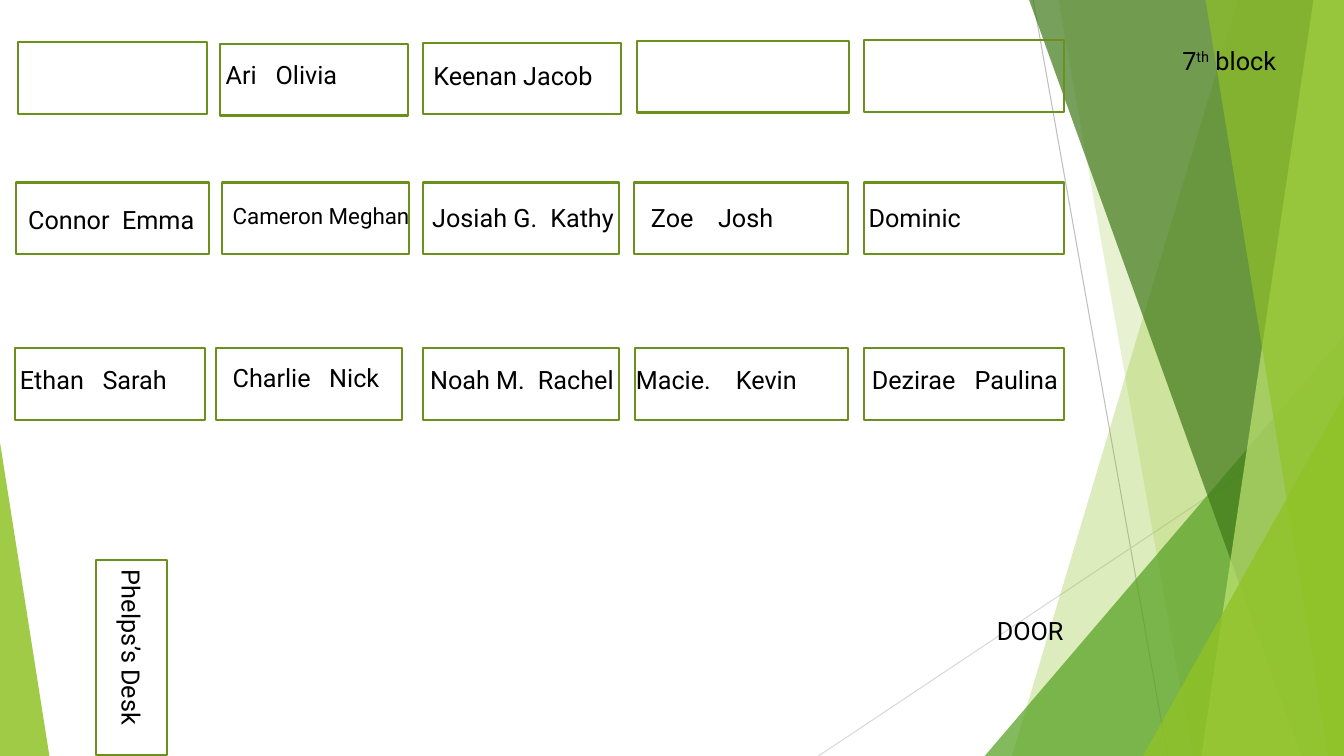
from dataclasses import dataclass
from typing import Any

from lxml.etree import SubElement
from pptx import Presentation
from pptx.dml.color import RGBColor
from pptx.enum.shapes import MSO_CONNECTOR, MSO_SHAPE
from pptx.enum.text import MSO_ANCHOR, MSO_AUTO_SIZE, PP_ALIGN
from pptx.oxml.ns import qn
from pptx.util import Pt

WIDE, HIGH = 960, 540
DESK_H, TEXT_H = 51.1, 29
FONT = "Roboto"
COLORS = {
    "text": "000000", "desk": "6B901C", "lime": "90C226", "pale": "C0E474",
    "green": "54A021", "dark": "3F7819", "gray": "BFBFBF", "mist": "D9D9D9",
}
FRAME = {"word_wrap": True, "auto_size": MSO_AUTO_SIZE.NONE,
         "vertical_anchor": MSO_ANCHOR.TOP}


@dataclass
class Line:
    x1: float
    y1: float
    x2: float
    y2: float
    color: str


@dataclass
class Band:
    """A slanted shape that fills out to the right edge."""
    top: float
    base: float
    color: str
    alpha: int


@dataclass
class Wedge:
    """A right triangle; tip is 0 for the left side, 1 for the right."""
    x: float
    y: float
    w: float
    tip: int
    color: str
    alpha: int


@dataclass
class Desk:
    x: float
    y: float
    w: float
    turn: int = 0


@dataclass
class Label:
    """Text whose second name, if any, starts at the tab stop."""
    x: float
    y: float
    w: float
    text: str
    tab: float = 0
    size: int = 18
    turn: int = 0
    raised: str = ""
    tail: str = ""


LINES = [Line(738, 0, 834, HIGH, "gray"), Line(WIDE, 290, 584.6, HIGH, "mist")]
# Back to front
SHADES = [
    Band(884.2, 722.9, "lime", 30),
    Band(756, 851.8, "lime", 20),
    Wedge(703.4, 239.8, 256.6, 1, "green", 72),
    Band(735.1, 929.5, "dark", 70),
    Band(938.2, 858.2, "pale", 70),
    Band(861.1, 949, "lime", 65),
    Wedge(816.5, 283, 143.5, 1, "lime", 80),
    Wedge(0, 316.1, 35.3, 0, "lime", 85),
]
DESKS = [
    # Back row
    Desk(13, 30.2, 134.6), Desk(157, 31.4, 134.6), Desk(302.4, 30.6, 141.1),
    Desk(455, 29.3, 151.2), Desk(617, 28.6, 143.3),
    # Middle row
    Desk(11.5, 130.4, 137.5), Desk(158.8, 130.4, 133.2), Desk(302.4, 130.4, 139.7),
    Desk(452.9, 130.4, 152.9), Desk(617, 130.4, 143.3),
    # Front row
    Desk(10.6, 248.8, 135.6), Desk(154.1, 248.8, 133.2), Desk(302.4, 248.8, 139.7),
    Desk(453.5, 248.8, 152.4), Desk(617, 248.8, 143.3),
    # Teacher
    Desk(24.2, 444.2, 139.7, 90),
]
LABELS = [
    Label(154.1, 38.9, 124, "Ari\tOlivia", 35.7),
    Label(302.4, 39.6, 148, "Keenan Jacob"),
    Label(13, 142.6, 135, "Connor\tEmma", 67.1),
    Label(159.1, 141.1, 144, "Cameron Meghan", size=16),
    Label(301.7, 141.1, 153, "Josiah G.\tKathy", 84.3),
    Label(457.9, 141.1, 137, "Zoe\tJosh", 47.9),
    Label(613.4, 141.1, 138, "Dominic"),
    Label(7.2, 257, 124, "Ethan\tSarah", 59),
    Label(159.1, 254.9, 124, "Charlie\tNick", 69),
    Label(300.2, 257, 150, "Noah M.\tRachel", 77),
    Label(447.1, 257, 159, "Macie.\tKevin", 71.4),
    Label(615.6, 257, 157, "Dezirae\tPaulina", 73.5),
    Label(704.9, 435.6, 144.7, "DOOR"),
    Label(21.6, 457.9, 144.7, "Phelps’s Desk", turn=90),
    Label(837.4, 28.8, 101.5, "7", raised="th", tail=" block"),
]


def tint(name: str) -> RGBColor:
    return RGBColor.from_string(COLORS[name])


def draw_line(shapes: Any, line: Line) -> None:
    ends = [Pt(n) for n in (line.x1, line.y1, line.x2, line.y2)]
    rule = shapes.add_connector(MSO_CONNECTOR.STRAIGHT, *ends)
    rule.line.color.rgb = tint(line.color)
    rule.line.width = Pt(0.75)
    SubElement(rule.element.spPr, qn("a:effectLst"))


def draw_shade(shapes: Any, item: Band | Wedge) -> None:
    if isinstance(item, Band):
        pen = shapes.build_freeform(Pt(item.top), 0)
        pen.add_line_segments([(Pt(WIDE), 0), (Pt(WIDE), Pt(HIGH)),
                               (Pt(item.base), Pt(HIGH))], close=True)
        shape = pen.convert_to_shape()
    else:
        shape = shapes.add_shape(MSO_SHAPE.ISOSCELES_TRIANGLE, Pt(item.x), Pt(item.y),
                                 Pt(item.w), Pt(HIGH - item.y))
        shape.adjustments[0] = item.tip
    shape.shadow.inherit = False
    shape.line.fill.background()
    shape.fill.solid()
    shape.fill.fore_color.rgb = tint(item.color)
    for mark in shape.element.spPr.iter(qn("a:srgbClr")):
        SubElement(mark, qn("a:alpha"), val=str(item.alpha * 1000))


def draw_desk(shapes: Any, desk: Desk) -> None:
    shape = shapes.add_shape(MSO_SHAPE.RECTANGLE, Pt(desk.x), Pt(desk.y),
                             Pt(desk.w), Pt(DESK_H))
    shape.shadow.inherit = False
    shape.rotation = desk.turn
    shape.fill.background()
    shape.line.color.rgb = tint("desk")
    shape.line.width = Pt(1.5)


def draw_label(shapes: Any, label: Label) -> None:
    box = shapes.add_textbox(Pt(label.x), Pt(label.y), Pt(label.w), Pt(TEXT_H))
    box.rotation = label.turn
    for key, value in FRAME.items():
        setattr(box.text_frame, key, value)
    para = box.text_frame.paragraphs[0]
    para.alignment = PP_ALIGN.LEFT
    if label.tab:
        tabs = SubElement(para._p.get_or_add_pPr(), qn("a:tabLst"))
        SubElement(tabs, qn("a:tab"), pos=str(Pt(label.tab)), algn="l")
    style = {"name": FONT, "size": Pt(label.size)}
    for part in filter(None, (label.text, label.raised, label.tail)):
        run = para.add_run()
        run.text = part
        for key, value in style.items():
            setattr(run.font, key, value)
        run.font.color.rgb = tint("text")
        if part == label.raised:
            run._r.get_or_add_rPr().set("baseline", "30000")


def main() -> None:
    deck = Presentation()
    deck.slide_width, deck.slide_height = Pt(WIDE), Pt(HIGH)
    shapes = deck.slides.add_slide(deck.slide_layouts[6]).shapes
    # Backdrop
    for line in LINES:
        draw_line(shapes, line)
    for item in SHADES:
        draw_shade(shapes, item)
    # Seating plan
    for desk in DESKS:
        draw_desk(shapes, desk)
    for label in LABELS:
        draw_label(shapes, label)
    deck.save("out.pptx")


if __name__ == "__main__":
    main()
